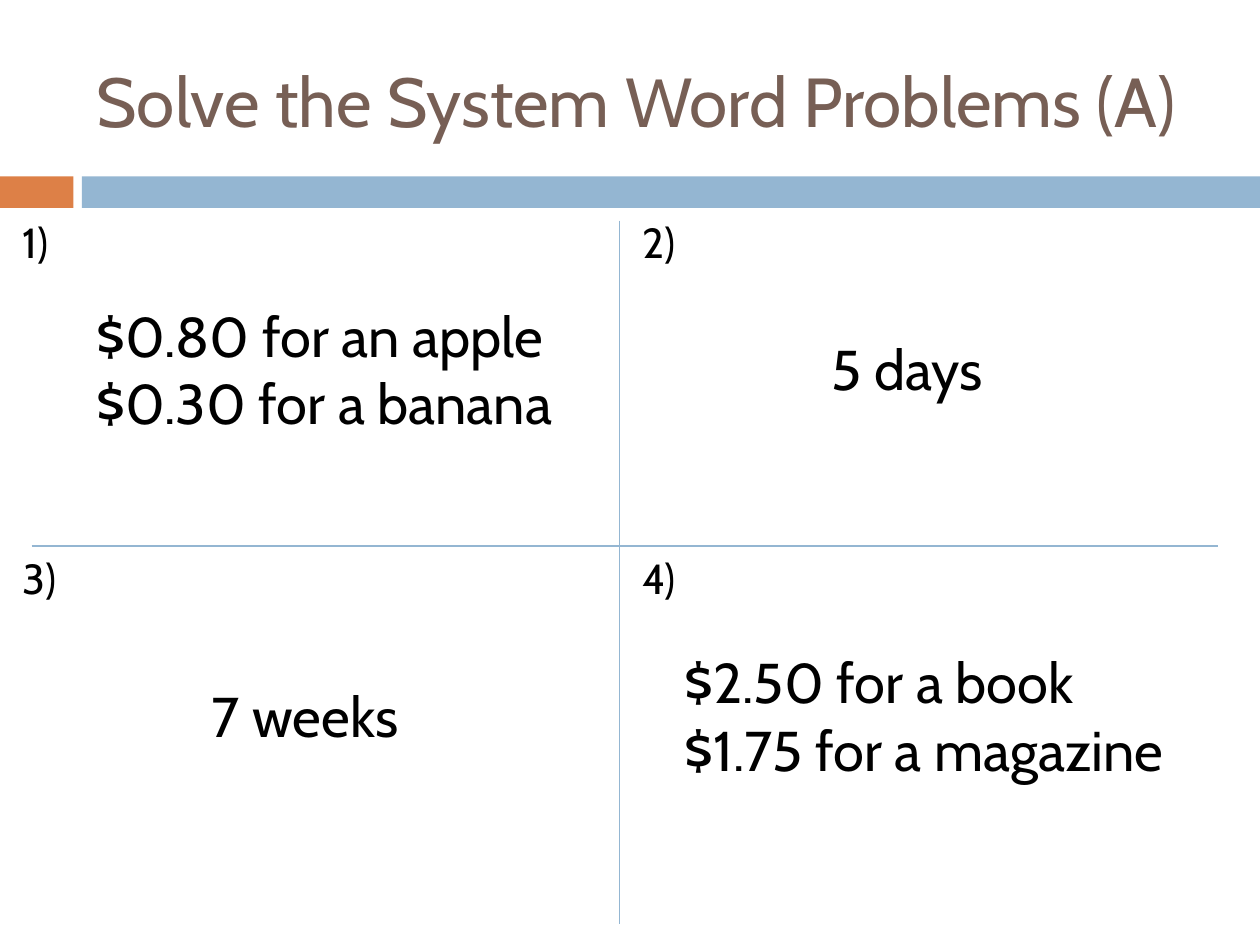
from lxml import etree
from pptx import Presentation
from pptx.dml.color import RGBColor
from pptx.enum.shapes import MSO_CONNECTOR, MSO_SHAPE
from pptx.enum.text import MSO_ANCHOR, MSO_AUTO_SIZE, PP_ALIGN
from pptx.oxml.ns import qn
from pptx.util import Inches, Pt

RECT, LINE = MSO_SHAPE.RECTANGLE, MSO_CONNECTOR.STRAIGHT
LEFT, TOP, MID = PP_ALIGN.LEFT, MSO_ANCHOR.TOP, MSO_ANCHOR.MIDDLE
NONE = MSO_AUTO_SIZE.NONE

ORANGE = RGBColor(0xDD, 0x80, 0x47)
BLUE = RGBColor(0x94, 0xB6, 0xD2)
BROWN = RGBColor(0x77, 0x5F, 0x55)
BLACK = RGBColor(0, 0, 0)

HEAD = {"name": "Cabin", "size": Pt(39.6), "bold": False}
MARK = {"name": "Cabin", "size": Pt(24), "bold": False}
REPLY = {"name": "Cabin", "size": Pt(32), "bold": False}

# The grid has 12 units to the inch: 120 columns by 90 rows.
COLS, ROWS = 120, 90
LINE_H, PAD = 6.5, 1.2

# Number, column and row of the cell, answer lines, answer inset and width, answer middle
CELLS = [
    ("1)", 1, 20, ["$0.80 for an apple", "$0.30 for a banana"], 7, 49, 15.1),
    ("2)", 60, 20, ["5 days"], 18, 23, 15.1),
    ("3)", 1, 52, ["7 weeks"], 18, 23, 16.1),
    ("4)", 60, 52, ["$2.50 for a book", "$1.75 for a magazine"], 4, 51, 16.1),
]


def grid(*units):
    return [Inches(u / 12) for u in units]


def write(shape, lines, form, color, anchor):
    frame = shape.text_frame
    frame.text = "\n".join(lines)
    frame.word_wrap, frame.auto_size = True, NONE
    frame.vertical_anchor = anchor
    for para in frame.paragraphs:
        para.alignment = LEFT
        for key, value in form.items():
            setattr(para.font, key, value)
        para.font.color.rgb = color


def add_text(slide, box, lines, form, anchor):
    shape = slide.shapes.add_textbox(*grid(*box))
    write(shape, lines, form, BLACK, anchor)


def add_bar(slide, box, color):
    bar = slide.shapes.add_shape(RECT, *grid(*box))
    bar.shadow.inherit = False
    bar.fill.solid()
    bar.fill.fore_color.rgb = color
    bar.line.fill.background()


def add_rule(slide, ends):
    rule = slide.shapes.add_connector(LINE, *grid(*ends))
    rule.line.color.rgb = BLUE
    rule.line.width = Pt(0.79)
    etree.SubElement(rule.element.spPr, qn("a:effectLst"))


def add_head(slide, box, text):
    """Place the title and the two-part band below it."""
    left, top, width, height = box
    title = slide.shapes.title
    title.left, title.top, title.width, title.height = grid(*box)
    write(title, [text], HEAD, BROWN, MID)
    band, split, gap = top + height + 0.8, left - 1, 0.8
    add_bar(slide, (0, band, split, 3), ORANGE)
    add_bar(slide, (split + gap, band, COLS - split - gap, 3), BLUE)


def add_cell(slide, mark, left, top, lines, inset, width, middle):
    """Place a problem number and its answer, centred on the cell's middle."""
    add_text(slide, (left, top, 6, 6), [mark], MARK, TOP)
    height = len(lines) * LINE_H + PAD
    box = (left + inset, top + middle - height / 2, width, height)
    add_text(slide, box, lines, REPLY, MID)


def main():
    deck = Presentation()
    deck.slide_width, deck.slide_height = grid(COLS, ROWS)
    slide = deck.slides.add_slide(deck.slide_layouts[5])
    add_head(slide, (8, 3, 107, 13), "Solve the System Word Problems (A)")
    for ends in [(59, 21, 59, 88), (3, 52, 116, 52)]:
        add_rule(slide, ends)
    for cell in CELLS:
        add_cell(slide, *cell)
    deck.save("out.pptx")


if __name__ == "__main__":
    main()
